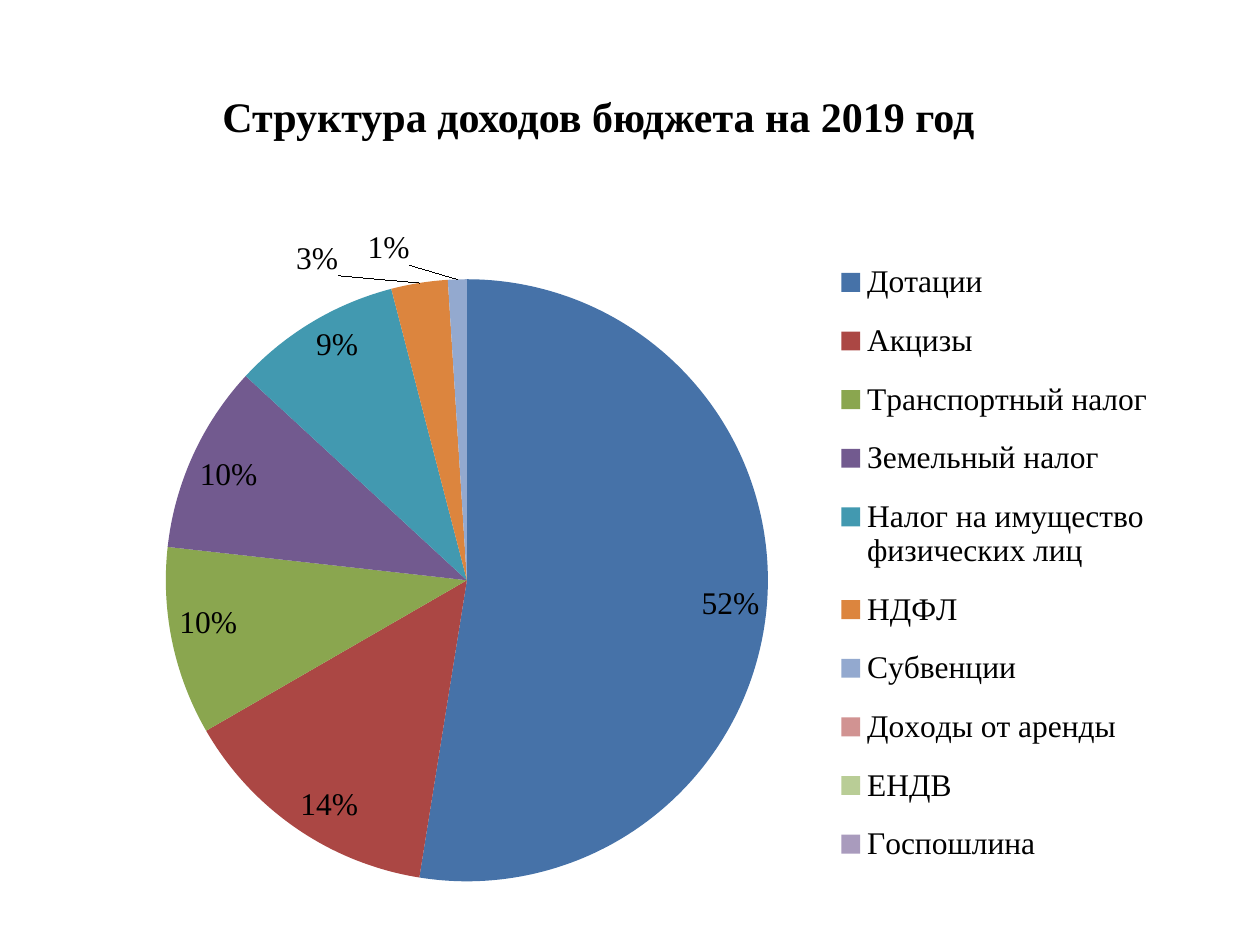
"""Build a slide with a pie chart of budget income by source."""
from typing import NamedTuple

from lxml import etree
from pptx import Presentation
from pptx.chart.data import CategoryChartData
from pptx.dml.color import RGBColor
from pptx.enum.chart import XL_CHART_TYPE, XL_LABEL_POSITION, XL_LEGEND_POSITION
from pptx.enum.text import MSO_ANCHOR, PP_ALIGN
from pptx.oxml.ns import qn
from pptx.util import Pt

PIE = XL_CHART_TYPE.PIE
RIGHT = XL_LEGEND_POSITION.RIGHT
INSIDE = XL_LABEL_POSITION.INSIDE_END
OUTSIDE = XL_LABEL_POSITION.OUTSIDE_END
MIDDLE = MSO_ANCHOR.MIDDLE
CENTER = PP_ALIGN.CENTER

BLACK = RGBColor(0x00, 0x00, 0x00)
BLUE = RGBColor(0x46, 0x72, 0xA8)
RED = RGBColor(0xAB, 0x47, 0x44)
GREEN = RGBColor(0x8A, 0xA6, 0x4F)
PURPLE = RGBColor(0x72, 0x5A, 0x8F)
TEAL = RGBColor(0x42, 0x99, 0xB0)
ORANGE = RGBColor(0xDC, 0x85, 0x3E)
SKY = RGBColor(0x93, 0xA9, 0xCF)
PINK = RGBColor(0xD1, 0x93, 0x92)
LIME = RGBColor(0xB9, 0xCD, 0x96)
LILAC = RGBColor(0xA9, 0x9B, 0xBD)

SERIF = "Times New Roman"
FORMAT = '0"%"'


class Slice(NamedTuple):
    name: str
    value: int
    color: RGBColor
    shift: tuple[float, float] | None = None


SLICES = [
    Slice("Дотации", 52, BLUE),
    Slice("Акцизы", 14, RED),
    Slice("Транспортный налог", 10, GREEN),
    Slice("Земельный налог", 10, PURPLE),
    Slice("Налог на имущество физических лиц", 9, TEAL),
    Slice("НДФЛ", 3, ORANGE, (-0.07, 0)),
    Slice("Субвенции", 1, SKY, (-0.06, -0.01)),
    Slice("Доходы от аренды", 0, PINK, (-0.01, -0.01)),
    Slice("ЕНДВ", 0, LIME, (0.03, -0.01)),
    Slice("Госпошлина", 0, LILAC, (0.08, -0.01)),
]


def style(font, **extra) -> None:
    for key, value in {"name": SERIF, **extra}.items():
        setattr(font, key, value)
    font.color.rgb = BLACK


def place(node, index: int, **parts) -> None:
    for old in node.findall(qn("c:layout")):
        node.remove(old)
    layout = etree.Element(qn("c:layout"))
    manual = etree.SubElement(layout, qn("c:manualLayout"))
    for tag, value in parts.items():
        etree.SubElement(manual, qn(f"c:{tag}")).set("val", str(value))
    node.insert(index, layout)


def add_title(slide) -> None:
    title = slide.shapes.title
    box = {"left": 48, "top": 21, "width": 588, "height": 90}
    for key, value in box.items():
        setattr(title, key, Pt(value))
    frame = title.text_frame
    frame.text = "Структура доходов бюджета на 2019 год"
    frame.vertical_anchor = MIDDLE
    line = frame.paragraphs[0]
    line.alignment = CENTER
    style(line.runs[0].font, size=Pt(24), bold=True)


def add_pie(slide, slices: list[Slice]) -> None:
    data = CategoryChartData()
    data.categories = [part.name for part in slices]
    data.add_series("Доходы", [part.value for part in slices])
    chart = slide.shapes.add_chart(
        PIE, Pt(36), Pt(126), Pt(653), Pt(388), data).chart
    chart.has_title = False
    style(chart.font, name="Calibri", size=Pt(18))
    chart.has_legend = True
    chart.legend.position = RIGHT
    chart.legend.include_in_layout = False
    style(chart.legend.font, size=Pt(18))
    plot = chart.plots[0]
    plot.vary_by_categories = True
    series = plot.series[0]
    labels = series.data_labels
    labels.show_value = True
    labels.number_format = FORMAT
    labels.number_format_is_linked = False
    labels.position = INSIDE
    style(labels.font, size=Pt(18))

    for index, part in enumerate(slices):
        point = series.points[index]
        point.format.fill.solid()
        point.format.fill.fore_color.rgb = part.color
        if part.shift:
            style(point.data_label.font, size=Pt(18))
            point.data_label.position = OUTSIDE

    root = chart._chartSpace
    moved = [part.shift for part in slices if part.shift]
    for node, (x, y) in zip(root.xpath(".//c:dLbl"), moved):
        place(node, 1, x=x, y=y)
        form = etree.Element(qn("c:numFmt"), formatCode=FORMAT, sourceLinked="0")
        node.insert(2, form)
    place(root.xpath(".//c:plotArea")[0], 0, layoutTarget="inner",
          xMode="edge", yMode="edge", x=0.09, y=0.086, w=0.527, h=0.888)
    place(root.xpath(".//c:legend")[0], 1,
          xMode="edge", yMode="edge", x=0.665, y=0.03, w=0.3, h=0.95)


def main() -> None:
    deck = Presentation()
    deck.slide_width, deck.slide_height = Pt(720), Pt(540)
    slide = deck.slides.add_slide(deck.slide_layouts[5])
    add_title(slide)
    add_pie(slide, SLICES)
    deck.save("out.pptx")


if __name__ == "__main__":
    main()
